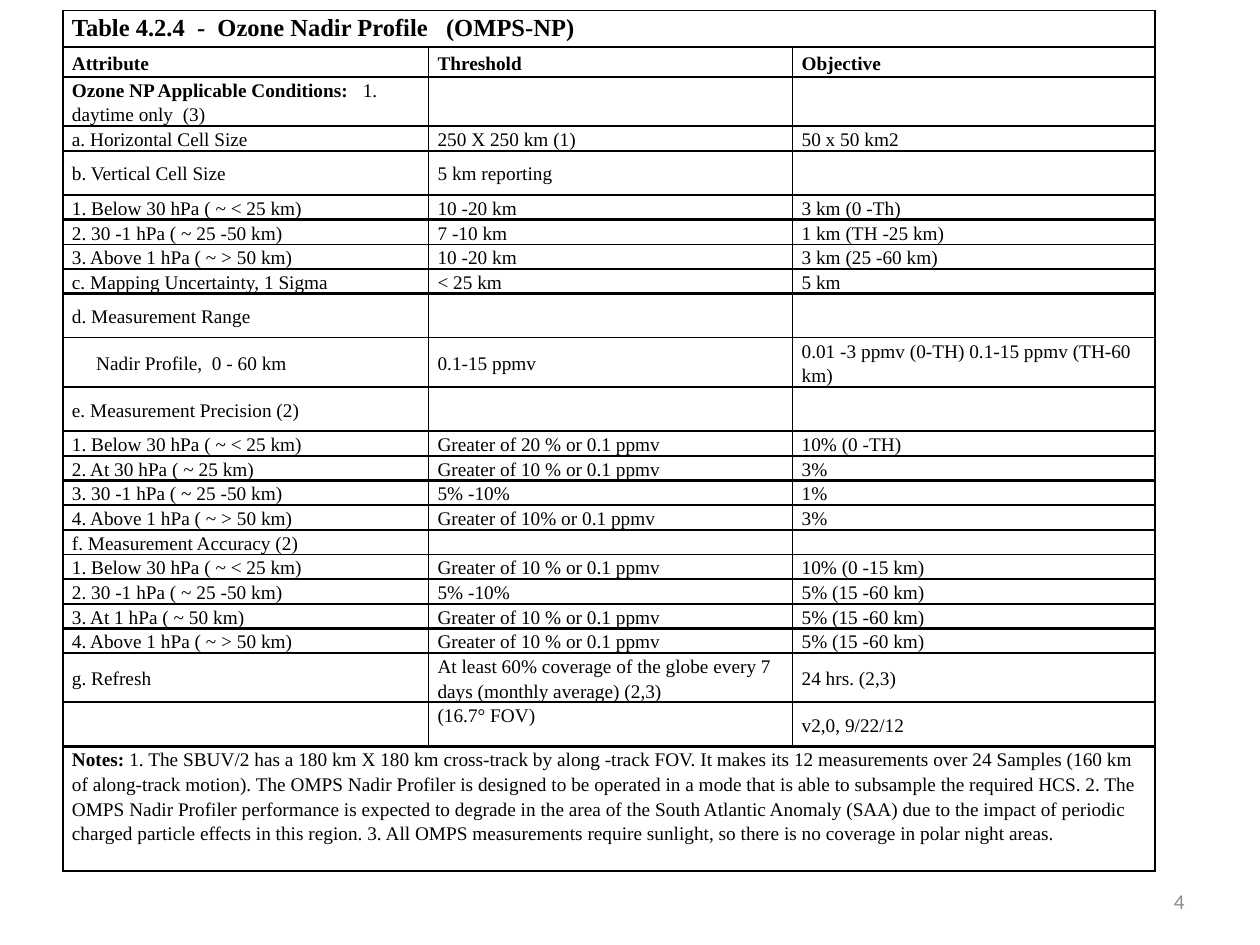
"""Build the slide with the OMPS-NP ozone nadir profile requirements table."""
from lxml import etree
from pptx import Presentation
from pptx.dml.color import RGBColor
from pptx.enum.text import MSO_ANCHOR, PP_ALIGN
from pptx.oxml.ns import qn
from pptx.util import Cm, Pt

TOP, MIDDLE = MSO_ANCHOR.TOP, MSO_ANCHOR.MIDDLE
RIGHT = PP_ALIGN.RIGHT
BLACK, WHITE, GREY = "000000", "FFFFFF", "8C8C8C"
TITLE, HEAD, LINE, DOUBLE, TALL, NOTES = 0.74, 0.6, 0.49, 0.99, 0.89, 2.51


def add_run(paragraph, text, size, font="Times New Roman", color=BLACK, bold=False):
    run = paragraph.add_run()
    run.text = text
    run.font.size = Pt(size)
    run.font.name = font
    run.font.bold = bold
    run.font.color.rgb = RGBColor.from_string(color)


def add_border(cell, side, width):
    line = etree.SubElement(cell._tc.get_or_add_tcPr(), qn(f"a:ln{side}"), w=str(Pt(width)))
    fill = etree.SubElement(line, qn("a:solidFill"))
    etree.SubElement(fill, qn("a:srgbClr"), val=BLACK)


notes_text = (
    "1. The SBUV/2 has a 180 km X 180 km cross-track by along -track FOV. It makes its 12 "
    "measurements over 24 Samples (160 km of along-track motion). The OMPS Nadir Profiler is "
    "designed to be operated in a mode that is able to subsample the required HCS. 2. The OMPS "
    "Nadir Profiler performance is expected to degrade in the area of the South Atlantic Anomaly "
    "(SAA) due to the impact of periodic charged particle effects in this region. 3. All OMPS "
    "measurements require sunlight, so there is no coverage in polar night areas."
)
requirements = [
    (TITLE, "Table 4.2.4  -  Ozone Nadir Profile   (OMPS-NP)", "", ""),
    (HEAD, "Attribute", "Threshold", "Objective"),
    (DOUBLE, "Ozone NP Applicable Conditions:|   1.  daytime only  (3)", "", ""),
    (LINE, "a. Horizontal Cell Size", "250 X 250 km (1)", "50 x 50 km2"),
    (TALL, "b. Vertical Cell Size", "5 km reporting", ""),
    (LINE, "1. Below 30 hPa ( ~ < 25 km)", "10 -20 km", "3 km (0 -Th)"),
    (LINE, "2. 30 -1 hPa ( ~ 25 -50 km)", "7 -10 km", "1 km (TH -25 km)"),
    (LINE, "3. Above 1 hPa ( ~ > 50 km)", "10 -20 km", "3 km (25 -60 km)"),
    (LINE, "c. Mapping Uncertainty, 1 Sigma", "< 25 km", "5 km"),
    (TALL, "d. Measurement Range", "", ""),
    (DOUBLE, "Nadir Profile,  0 - 60 km", "0.1-15 ppmv",
     "0.01 -3 ppmv (0-TH) 0.1-15 ppmv (TH-60 km)"),
    (TALL, "e. Measurement Precision (2)", "", ""),
    (LINE, "1. Below 30 hPa ( ~ < 25 km)", "Greater of 20 % or 0.1 ppmv", "10% (0 -TH)"),
    (LINE, "2. At 30 hPa ( ~ 25 km)", "Greater of 10 % or 0.1 ppmv", "3%"),
    (LINE, "3. 30 -1 hPa ( ~ 25 -50 km)", "5% -10%", "1%"),
    (LINE, "4. Above 1 hPa ( ~ > 50 km)", "Greater of 10% or 0.1 ppmv", "3%"),
    (LINE, "f. Measurement Accuracy (2)", "", ""),
    (LINE, "1. Below 30 hPa ( ~ < 25 km)", "Greater of 10 % or 0.1 ppmv", "10% (0 -15 km)"),
    (LINE, "2. 30 -1 hPa ( ~ 25 -50 km)", "5% -10%", "5% (15 -60 km)"),
    (LINE, "3. At 1 hPa ( ~ 50 km)", "Greater of 10 % or 0.1 ppmv", "5% (15 -60 km)"),
    (LINE, "4. Above 1 hPa ( ~ > 50 km)", "Greater of 10 % or 0.1 ppmv", "5% (15 -60 km)"),
    (DOUBLE, "g. Refresh",
     "At least 60% coverage of the globe every 7 days (monthly average) (2,3)", "24 hrs. (2,3)"),
    (TALL, "", "(16.7° FOV)", "v2,0, 9/22/12"),
    (NOTES, "Notes: |" + notes_text, "", ""),
]
column_widths = [7.37, 7.34, 7.31]
last_row, last_column = len(requirements) - 1, len(column_widths) - 1
merged_rows = {0, last_row}
thin_above = {0, 4, 7, 10, 12, 15, 17, 18, 21}
top_rows = {0, 5, 13, 16, last_row}
top_cells = {(3, 2), (21, 1), (22, 1)}
nadir_row = 10

prs = Presentation()
prs.slide_width, prs.slide_height = Cm(25.4), Cm(19.05)
slide = prs.slides.add_slide(prs.slide_layouts[6])

profile = slide.shapes.add_table(
    len(requirements), len(column_widths), Cm(1.27), Cm(0.21),
    Cm(sum(column_widths)), Cm(sum(row[0] for row in requirements))).table
profile.first_row = profile.horz_banding = False
for column, width in zip(profile.columns, column_widths):
    column.width = Cm(width)
for row in merged_rows:
    profile.cell(row, 0).merge(profile.cell(row, last_column))

for row, (height, *entries) in enumerate(requirements):
    profile.rows[row].height = Cm(height)
    for col, entry in enumerate(entries):
        cell = profile.cell(row, col)
        if cell.is_spanned:
            continue
        at_right_edge = col == last_column or row in merged_rows
        add_border(cell, "L", 1)
        add_border(cell, "R", 1.5 if at_right_edge else 1)
        add_border(cell, "T", 1 if row in thin_above else 1.5)
        add_border(cell, "B", 1 if row + 1 in thin_above else 1.5)
        cell.fill.solid()
        cell.fill.fore_color.rgb = RGBColor.from_string(WHITE)
        cell.margin_left = Cm(0.67 if (row, col) == (nadir_row, 0) else 0.18)
        cell.margin_right = Cm(0.18)
        cell.margin_top = cell.margin_bottom = Cm(0)
        at_top = row in top_rows or (row, col) in top_cells
        cell.vertical_anchor = TOP if at_top else MIDDLE
        paragraph = cell.text_frame.paragraphs[0]
        paragraph.line_spacing = 1.15
        if not entry:
            etree.SubElement(paragraph._p, qn("a:endParaRPr"), sz="1100")
            continue
        lead, *rest = entry.split("|")
        add_run(paragraph, lead, 14 if row == 0 else 11, bold=row < 2 or bool(rest))
        for text in rest:
            add_run(paragraph, text, 11)

page_number = slide.shapes.add_textbox(Cm(18.21), Cm(17.65), Cm(5.92), Cm(1.02)).text_frame
page_number.word_wrap = True
page_number.vertical_anchor = MIDDLE
page_number.paragraphs[0].alignment = RIGHT
add_run(page_number.paragraphs[0], "4", 12, "Calibri", GREY)

prs.save("out.pptx")
